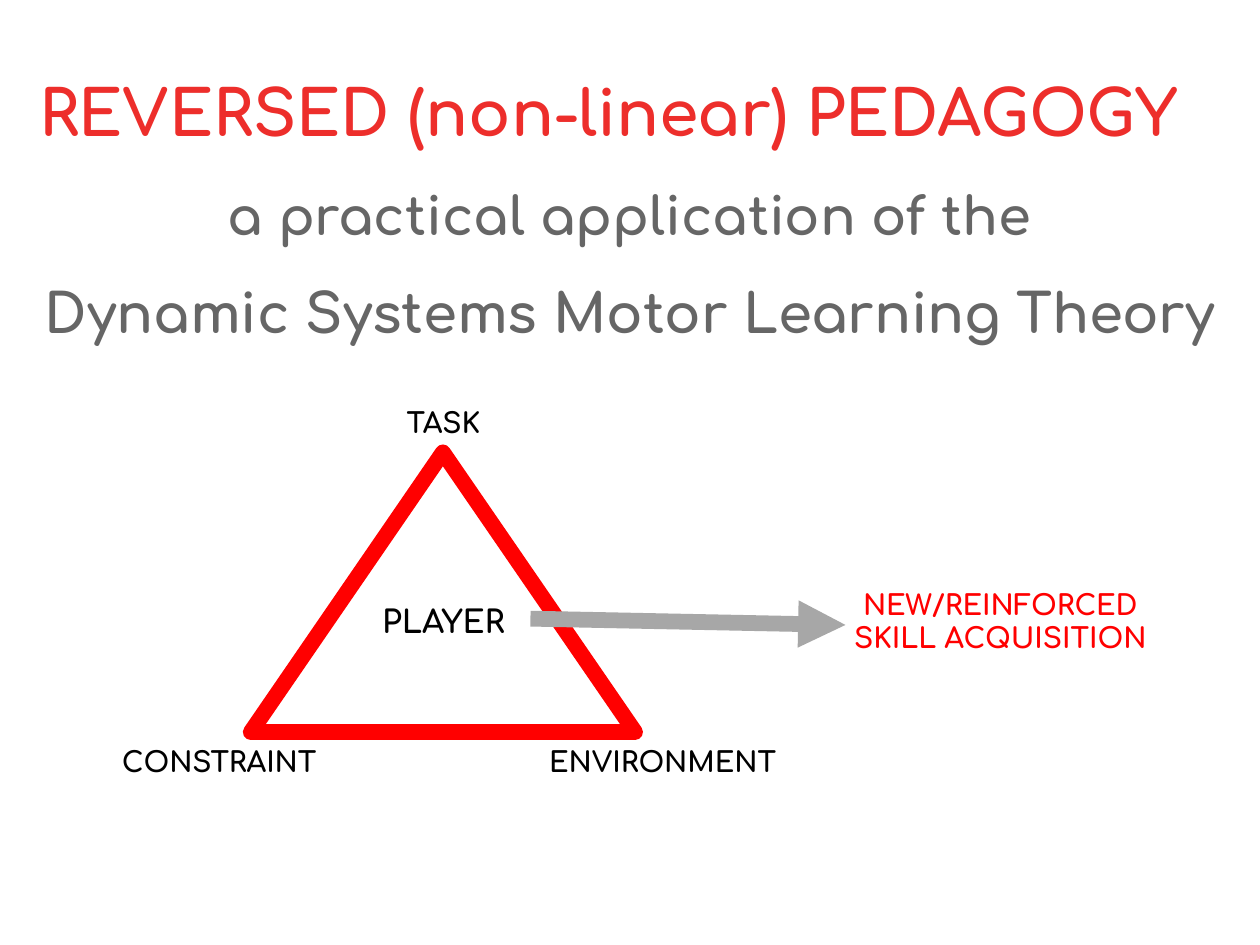
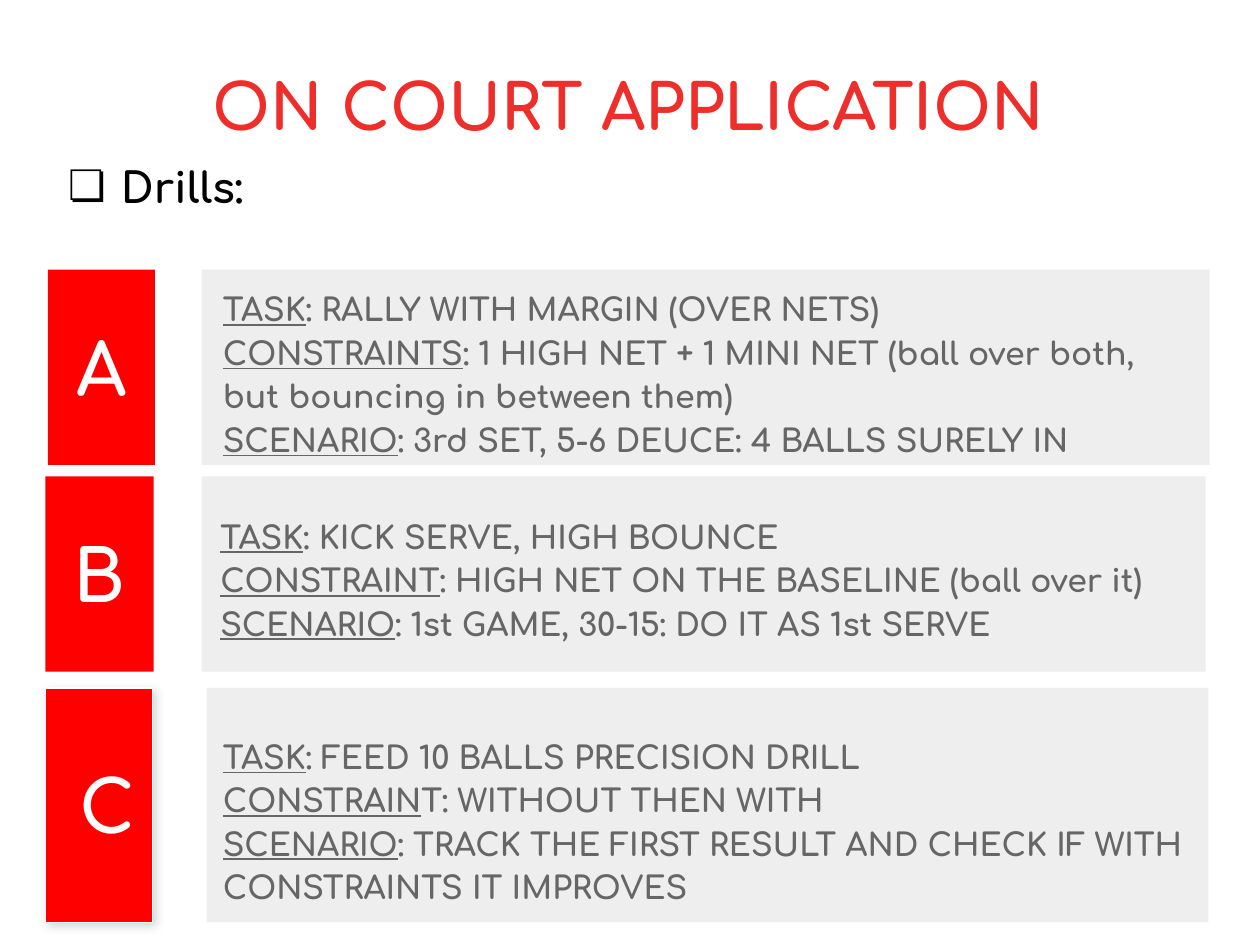
import pptx
import pptx.util
import pptx.dml.color
import pptx.enum.dml
import pptx.enum.shapes
import pptx.enum.text
import pptx.oxml
import pptx.oxml.ns
import lxml.etree

PX = 9144  # 100 px to the inch
FONT = "Comfortaa"
COLOURS = {
    "title": "ED2E2B",
    "red": "FF0000",
    "grey": "666666",
    "arrow": "A7A7A7",
    "panel": "EEEEEE",
    "black": "000000",
    "white": "FFFFFF",
}
SHAPE = pptx.enum.shapes.MSO_SHAPE
ALIGN = pptx.enum.text.PP_ALIGN
ANCHOR = pptx.enum.text.MSO_ANCHOR
qn = pptx.oxml.ns.qn

# Each drill: letter, badge box, panel box, text box, letter shift, lines of (underlined, plain)
DRILLS = [
    ("A", (38, 214, 85, 155), (160, 214, 800, 155), (167, 233, 792, 124), 0, [
        ("TASK", ": RALLY WITH MARGIN (OVER NETS)"),
        ("CONSTRAINTS", ": 1 HIGH NET + 1 MINI NET (ball over both, but bouncing in between them)"),
        ("SCENARIO", ": 3rd SET, 5-6 DEUCE: 4 BALLS SURELY IN")]),
    ("B", (36, 378, 86, 155), (160, 378, 797, 155), (165, 397, 792, 122), 0, [
        ("TASK", ": KICK SERVE, HIGH BOUNCE"),
        ("CONSTRAINT", ": HIGH NET ON THE BASELINE (ball over it)"),
        ("SCENARIO", ": 1st GAME, 30-15: DO IT AS 1st SERVE")]),
    ("C", (36, 546, 85, 186), (164, 546, 795, 186), (167, 567, 782, 166), 13, [
        ("TASK", ": FEED 10 BALLS PRECISION DRILL"),
        ("CONSTRAIN", "T: WITHOUT THEN WITH"),
        ("SCENARIO", ": TRACK THE FIRST RESULT AND CHECK IF WITH CONSTRAINTS IT IMPROVES")]),
]


def px(*lengths):
    return [pptx.util.Emu(n * PX) for n in lengths]


def rgb(name):
    return pptx.dml.color.RGBColor.from_string(COLOURS[name])


def add_run(p, text, size=16, colour="black", underline=False):
    r = p.add_run()
    r.text = text
    f = r.font
    f.name, f.size, f.bold = FONT, pptx.util.Pt(size), True
    f.color.rgb = rgb(colour)
    f.underline = underline
    return r


def set_frame(tf, inset=10, anchor=ANCHOR.TOP):
    tf.word_wrap = True
    tf.auto_size = pptx.enum.text.MSO_AUTO_SIZE.NONE
    tf.vertical_anchor = anchor
    tf.margin_left, tf.margin_top, tf.margin_right, tf.margin_bottom = px(*[inset] * 4)


def set_bullet(p, char=None, left=0, hang=0):
    pPr = p._p.get_or_add_pPr()
    pPr.set("marL", str(left * PX))
    pPr.set("indent", str(-hang * PX))
    if char is None:
        lxml.etree.SubElement(pPr, qn("a:buNone"))
        return
    clr = lxml.etree.SubElement(pPr, qn("a:buClr"))
    lxml.etree.SubElement(clr, qn("a:srgbClr"), val=COLOURS["black"])
    lxml.etree.SubElement(pPr, qn("a:buFont"), typeface=FONT)
    lxml.etree.SubElement(pPr, qn("a:buChar"), char=char)


def place(ph, box, **frame):
    ph.left, ph.top, ph.width, ph.height = px(*box)
    set_frame(ph.text_frame, **frame)
    return ph.text_frame


def add_label(shapes, text, box, **fmt):
    tf = shapes.add_textbox(*px(*box)).text_frame
    set_frame(tf)
    p = tf.paragraphs[0]
    p.alignment = ALIGN.CENTER
    add_run(p, text, **fmt)


def add_block(shapes, kind, box, fill):
    sp = shapes.add_shape(kind, *px(*box))
    sp.shadow.inherit = False
    sp.fill.solid()
    sp.fill.fore_color.rgb = rgb(fill)
    sp.line.fill.background()
    return sp


def set_line(line, colour, width):
    line.color.rgb = rgb(colour)
    line.width = pptx.util.Pt(width)


def new_slide(prs, title, box, align):
    s = prs.slides.add_slide(prs.slide_layouts[1])
    tf = place(s.shapes.title, box, inset=5, anchor=ANCHOR.MIDDLE)
    p = tf.paragraphs[0]
    p.alignment = align
    add_run(p, title, size=36, colour="title")
    return s


def add_triangle(s, left, top):
    """Player in the middle, one factor at each corner."""
    grp = s.shapes.add_group_shape().shapes
    sp = add_block(grp, SHAPE.ISOSCELES_TRIANGLE, (left, top, 305, 222), "white")
    set_line(sp.line, "red", 9)
    add_label(grp, "PLAYER", (left + 48, top + 109, 210, 50), size=18)
    add_label(grp, "TASK", (left + 80, top - 47, 146, 47))
    add_label(grp, "CONSTRAINT", (left - 130, top + 222, 210, 47))
    add_label(grp, "ENVIRONMENT", (left + 222, top + 222, 210, 47))


def add_outcome(s, left, top):
    """Arrow from the player to the skill that results."""
    cn = s.shapes.add_connector(pptx.enum.shapes.MSO_CONNECTOR.STRAIGHT,
                                *px(left, top, left + 250, top + 5))
    set_line(cn.line, "arrow", 9)
    lxml.etree.SubElement(cn.line._get_or_add_ln(), qn("a:tailEnd"), type="triangle")
    lxml.etree.SubElement(cn._element.spPr, qn("a:effectLst"))
    add_label(s.shapes, "NEW/REINFORCED SKILL ACQUISITION",
              (left + 238, top - 35, 270, 74), colour="red")


def theory_slide(prs):
    s = new_slide(prs, "REVERSED (non-linear) PEDAGOGY", (26, 60, 947, 57), ALIGN.LEFT)

    # Subtitle lines
    tf = place(s.placeholders[1], (26, 140, 947, 145), inset=5)
    lines = [("a practical application of the", 30, 0),
             ("Dynamic Systems Motor Learning Theory", 31, 19)]
    for i, (text, size, gap) in enumerate(lines):
        p = tf.add_paragraph() if i else tf.paragraphs[0]
        p.alignment = ALIGN.CENTER
        p.space_before = pptx.util.Pt(gap)
        set_bullet(p)
        add_run(p, text, size=size, colour="grey")

    add_triangle(s, 199, 359)
    add_outcome(s, 421, 491)


def add_soft_shadow(sp):
    effects = sp._element.spPr.find(qn("a:effectLst"))
    shadow = lxml.etree.SubElement(effects, qn("a:outerShdw"), blurRad="71000",
                                   dist="28000", dir="2700000", rotWithShape="0")
    clr = lxml.etree.SubElement(shadow, qn("a:srgbClr"), val=COLOURS["black"])
    lxml.etree.SubElement(clr, qn("a:alpha"), val="16000")


def add_drill(s, letter, badge_box, panel_box, text_box, shift, lines):
    grp = s.shapes.add_group_shape().shapes
    add_block(grp, SHAPE.RECTANGLE, panel_box, "panel")

    # Letter badge
    badge = add_block(grp, SHAPE.RECTANGLE, badge_box, "red")
    if letter == "C":
        set_line(badge.line, "white", 0.75)
        add_soft_shadow(badge)
    tf = badge.text_frame
    set_frame(tf, anchor=ANCHOR.MIDDLE)
    tf.margin_left = px(10 + shift)[0]
    p = tf.paragraphs[0]
    p.alignment = ALIGN.CENTER
    add_run(p, letter, size=41, colour="white")

    # Task, constraint and scenario
    tf = grp.add_textbox(*px(*text_box)).text_frame
    set_frame(tf, anchor=ANCHOR.MIDDLE)
    for i, (head, rest) in enumerate(lines):
        p = tf.add_paragraph() if i else tf.paragraphs[0]
        p.line_spacing = 1.15
        add_run(p, head, size=18, colour="grey", underline=True)
        add_run(p, rest, size=18, colour="grey")


def drills_slide(prs):
    s = new_slide(prs, "ON COURT APPLICATION", (152, 55, 693, 57), ALIGN.CENTER)
    p = place(s.placeholders[1], (36, 118, 921, 61)).paragraphs[0]
    p.space_before = pptx.util.Pt(0)
    set_bullet(p, "❏", left=50, hang=42)
    add_run(p, "Drills:", size=24)
    for drill in DRILLS:
        add_drill(s, *drill)


def main():
    prs = pptx.Presentation()
    prs.slide_width, prs.slide_height = px(1000, 750)
    theory_slide(prs)
    drills_slide(prs)
    prs.save("out.pptx")


if __name__ == "__main__":
    main()
